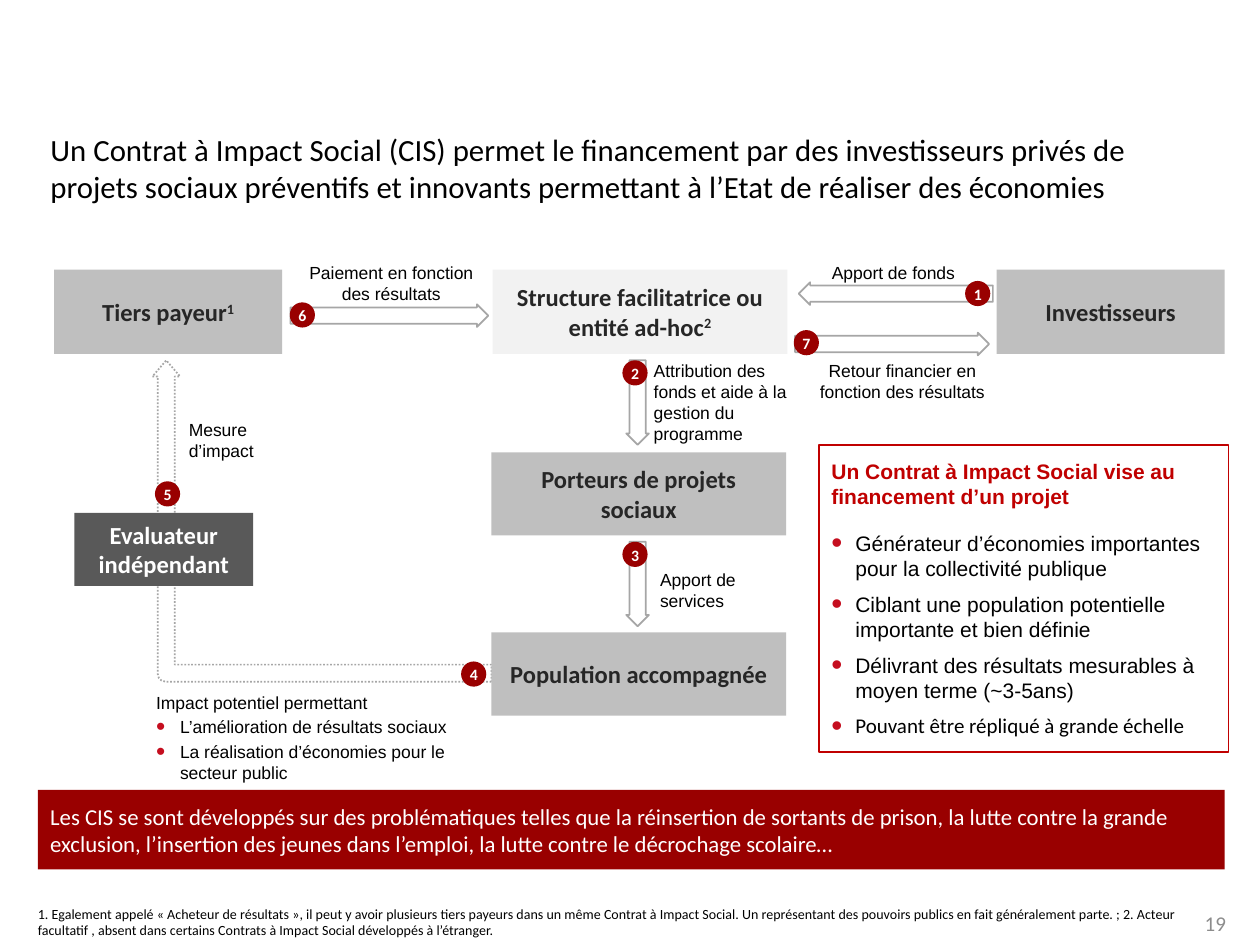
from typing import NamedTuple

from lxml.etree import SubElement
from pptx import Presentation
from pptx.dml.color import RGBColor
from pptx.enum.dml import MSO_LINE
from pptx.enum.shapes import MSO_SHAPE
from pptx.enum.text import MSO_ANCHOR, MSO_AUTO_SIZE, PP_ALIGN
from pptx.oxml.ns import qn
from pptx.util import Pt

PX = 9144
BLACK = RGBColor(0x00, 0x00, 0x00)
WHITE = RGBColor(0xFF, 0xFF, 0xFF)
DARK_TEXT = RGBColor(0x26, 0x26, 0x26)
DARK_GREY = RGBColor(0x59, 0x59, 0x59)
PAGE_GREY = RGBColor(0x8C, 0x8C, 0x8C)
LINE_GREY = RGBColor(0xA6, 0xA6, 0xA6)
BOX_GREY = RGBColor(0xBF, 0xBF, 0xBF)
PALE_GREY = RGBColor(0xF2, 0xF2, 0xF2)
DARK_RED = RGBColor(0x99, 0x00, 0x00)
RED = RGBColor(0xC0, 0x00, 0x00)
BULLET_RED = RGBColor(0xC5, 0x0E, 0x1F)


class Box(NamedTuple):
    left: int
    top: int
    width: int
    height: int

    def inside(self, left, top, width, height):
        return Box(self.left + left, self.top + top, width, height)

    def emu(self):
        return [length * PX for length in self]


def add_shape(slide, kind, box, fill, line=None):
    shape = slide.shapes.add_shape(kind, *box.emu())
    shape.shadow.inherit = False
    shape.fill.solid()
    shape.fill.fore_color.rgb = fill
    if line is None:
        shape.line.fill.background()
    else:
        shape.line.color.rgb = line
        shape.line.width = Pt(1)
    return shape


def set_frame(shape, anchor=MSO_ANCHOR.TOP, insets=(10, 5, 10, 5)):
    frame = shape.text_frame
    frame.word_wrap = True
    frame.auto_size = MSO_AUTO_SIZE.NONE
    frame.vertical_anchor = anchor
    (frame.margin_left, frame.margin_top,
     frame.margin_right, frame.margin_bottom) = [inset * PX for inset in insets]
    return frame


def add_text_box(slide, box, **frame_options):
    return set_frame(slide.shapes.add_textbox(*box.emu()), **frame_options)


def add_paragraph(frame, align=PP_ALIGN.LEFT, before=0, after=0):
    first = frame.paragraphs[0]
    paragraph = frame.add_paragraph() if first.runs else first
    paragraph.alignment = align
    paragraph.space_before = Pt(before)
    paragraph.space_after = Pt(after)
    return paragraph


def add_run(paragraph, text, size, color, font="Calibri", bold=False):
    run = paragraph.add_run()
    run.text = text
    run.font.name = font
    run.font.size = Pt(size)
    run.font.bold = bold
    run.font.color.rgb = color
    return run


def add_bullet(paragraph):
    properties = paragraph._p.get_or_add_pPr()
    properties.set("marL", str(19 * PX))
    properties.set("indent", str(-19 * PX))
    color = SubElement(properties, qn("a:buClr"))
    SubElement(color, qn("a:srgbClr")).set("val", str(BULLET_RED))
    SubElement(properties, qn("a:buSzPct")).set("val", "150000")
    SubElement(properties, qn("a:buFont")).set("typeface", "Arial")
    SubElement(properties, qn("a:buChar")).set("char", "•")


def place_title(slide, box):
    title = slide.shapes.title
    title.left, title.top, title.width, title.height = box.emu()
    paragraph = add_paragraph(set_frame(title), before=3.5)
    add_run(paragraph, "Un Contrat à Impact Social (CIS) permet le financement par des "
            "investisseurs privés de projets sociaux préventifs et innovants "
            "permettant à l’Etat de réaliser des économies", 17.6, BLACK)


def add_actor(slide, box, name, note="", fill=BOX_GREY, color=DARK_TEXT):
    shape = add_shape(slide, MSO_SHAPE.RECTANGLE, box, fill)
    paragraph = add_paragraph(set_frame(shape, MSO_ANCHOR.MIDDLE), PP_ALIGN.CENTER)
    add_run(paragraph, name, 14, color, bold=True)
    if note:
        run = add_run(paragraph, note, 14, color, bold=True)
        run._r.get_or_add_rPr().set("baseline", "30000")


def add_arrow(slide, kind, box, rotation, adjustments):
    arrow = add_shape(slide, kind, box, WHITE, LINE_GREY)
    arrow.rotation = rotation
    for index, value in enumerate(adjustments):
        arrow.adjustments[index] = value
    return arrow


def add_label(slide, box, text, align=PP_ALIGN.LEFT, bullets=()):
    frame = add_text_box(slide, box)
    add_run(add_paragraph(frame, align, before=2), text, 10, BLACK, "Arial")
    for bullet in bullets:
        paragraph = add_paragraph(frame, before=2)
        add_bullet(paragraph)
        add_run(paragraph, bullet, 10, BLACK, "Arial")


def add_badge(slide, box, number):
    badge = add_shape(slide, MSO_SHAPE.OVAL, box, DARK_RED)
    paragraph = add_paragraph(set_frame(badge, insets=(4, 0, 4, 0)), before=1.8)
    add_run(paragraph, str(number), 9, WHITE, bold=True)


def place_diagram(slide, box):
    for left, top, length, rotation in (
            (257, -31, 157, 90), (659, -47, 154, 270), (656, -7, 154, 90),
            (454, 83, 67, 180), (454, 227, 67, 180)):
        add_arrow(slide, MSO_SHAPE.UP_ARROW, box.inside(left, top, 18, length),
                  rotation, (0.72, 0.5))
    impact_arrow = add_arrow(slide, MSO_SHAPE.BENT_ARROW, box.inside(85, 76, 255, 269),
                             270, (0.053, 0.043, 0.05, 0.024))
    impact_arrow.line.dash_style = MSO_LINE.ROUND_DOT

    add_actor(slide, box.inside(348, 11, 234, 67),
              "Structure facilitatrice ou entité ad-hoc", "2", PALE_GREY)
    add_actor(slide, box.inside(0, 11, 181, 67), "Tiers payeur", "1")
    add_actor(slide, box.inside(748, 11, 181, 67), "Investisseurs")
    add_actor(slide, box.inside(347, 156, 234, 66), "Porteurs de projets sociaux")
    add_actor(slide, box.inside(347, 299, 234, 66), "Population accompagnée")
    add_actor(slide, box.inside(16, 204, 142, 58), "Evaluateur indépendant",
              fill=DARK_GREY, color=WHITE)

    add_label(slide, box.inside(71, 341, 291, 83), "Impact potentiel permettant",
              bullets=("L’amélioration de résultats sociaux",
                       "La réalisation d’économies pour le secteur public"))
    add_label(slide, box.inside(466, 78, 140, 77),
              "Attribution des fonds et aide à la gestion du programme")
    add_label(slide, box.inside(471, 244, 101, 44), "Apport de services")
    add_label(slide, box.inside(97, 125, 101, 44), "Mesure d’impact")
    add_label(slide, box.inside(607, 0, 118, 27), "Apport de fonds", PP_ALIGN.CENTER)
    add_label(slide, box.inside(597, 78, 152, 44),
              "Retour financier en fonction des résultats", PP_ALIGN.CENTER)
    add_label(slide, box.inside(187, 0, 161, 44),
              "Paiement en fonction des résultats", PP_ALIGN.CENTER)

    positions = ((723, 20), (451, 83), (451, 227), (323, 322), (80, 179), (187, 37), (587, 59))
    for number, (left, top) in enumerate(positions, start=1):
        add_badge(slide, box.inside(left, top, 20, 20), number)


def place_goals(slide, box):
    panel = add_shape(slide, MSO_SHAPE.RECTANGLE, box, WHITE, RED)
    frame = set_frame(panel, MSO_ANCHOR.MIDDLE, (10, 10, 10, 10))
    add_run(add_paragraph(frame, after=12),
            "Un Contrat à Impact Social vise au financement d’un projet",
            12, RED, "Arial", bold=True)
    for text, font in (
            ("Générateur d’économies importantes pour la collectivité publique", "Arial"),
            ("Ciblant une population potentielle importante et bien définie", "Arial"),
            ("Délivrant des résultats mesurables à moyen terme (~3-5ans)", "Arial"),
            ("Pouvant être répliqué à grande échelle", "Calibri")):
        paragraph = add_paragraph(frame, after=6)
        add_bullet(paragraph)
        add_run(paragraph, text, 12, BLACK, font)


def place_banner(slide, box):
    banner = add_shape(slide, MSO_SHAPE.RECTANGLE, box, DARK_RED)
    paragraph = add_paragraph(set_frame(banner, insets=(10, 10, 10, 10)), before=2.6)
    add_run(paragraph, "Les CIS se sont développés sur des problématiques telles que la "
            "réinsertion de sortants de prison, la lutte contre la grande exclusion, "
            "l’insertion des jeunes dans l’emploi, la lutte contre le décrochage "
            "scolaire…", 13, WHITE)


def place_footer(slide, box):
    notes = add_text_box(slide, box.inside(0, 0, 911, 39),
                         anchor=MSO_ANCHOR.BOTTOM, insets=(0, 0, 0, 0))
    add_run(add_paragraph(notes, before=1.6),
            "1. Egalement appelé « Acheteur de résultats », il peut y avoir plusieurs "
            "tiers payeurs dans un même Contrat à Impact Social. Un représentant des "
            "pouvoirs publics en fait généralement parte. ; 2. Acteur facultatif , absent "
            "dans certains Contrats à Impact Social développés à l’étranger.", 8, BLACK)
    page = add_text_box(slide, box.inside(919, 15, 24, 24),
                        anchor=MSO_ANCHOR.MIDDLE, insets=(0, 0, 0, 0))
    add_run(add_paragraph(page, PP_ALIGN.RIGHT), "19", 12, PAGE_GREY)


def main():
    presentation = Presentation()
    presentation.slide_width = 1000 * PX
    presentation.slide_height = 750 * PX
    slide = presentation.slides.add_slide(presentation.slide_layouts[5])
    place_title(slide, Box(30, 99, 943, 71))
    place_diagram(slide, Box(43, 203, 929, 424))
    place_goals(slide, Box(650, 353, 325, 244))
    place_banner(slide, Box(30, 627, 942, 63))
    place_footer(slide, Box(30, 706, 943, 39))
    presentation.save("out.pptx")


if __name__ == "__main__":
    main()
